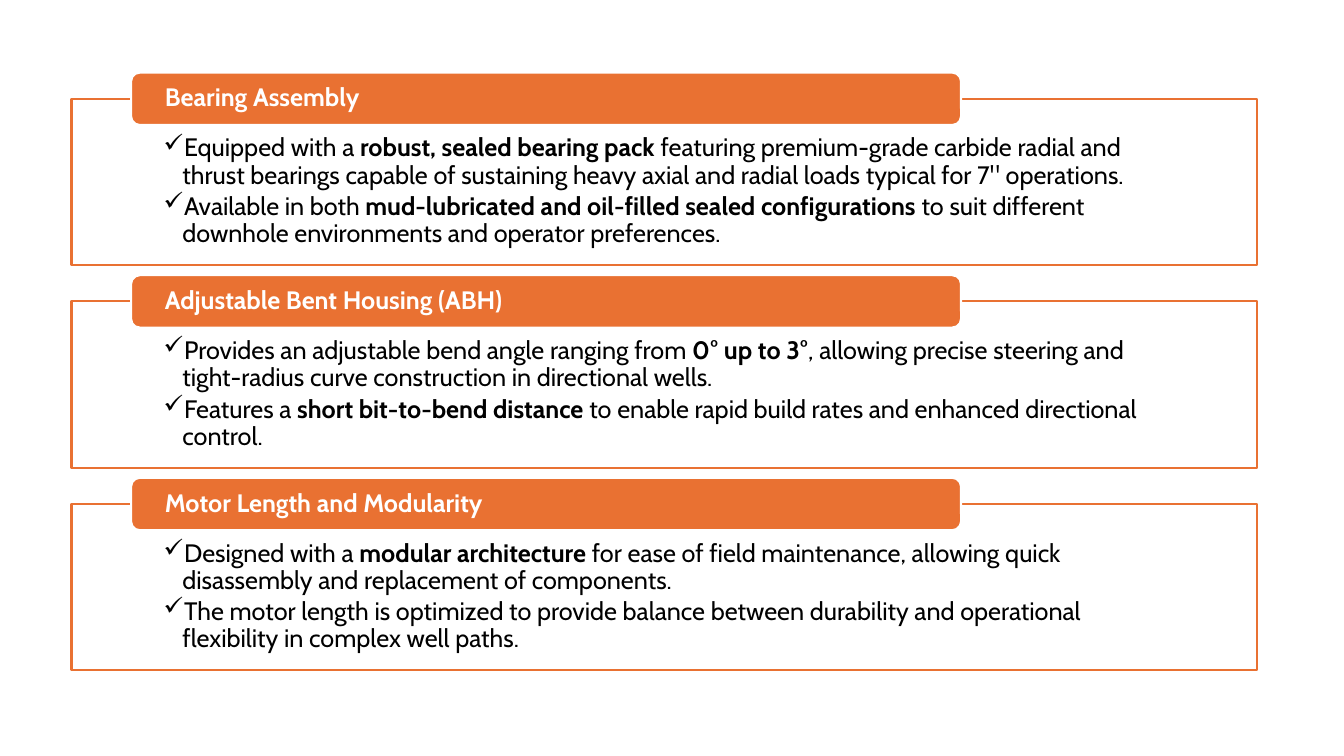
from lxml import etree
from pptx import Presentation
from pptx.dml.color import RGBColor
from pptx.enum.shapes import MSO_SHAPE
from pptx.enum.text import MSO_ANCHOR, PP_ALIGN
from pptx.oxml.ns import qn
from pptx.util import Inches, Pt

RECT, ROUND = MSO_SHAPE.RECTANGLE, MSO_SHAPE.ROUNDED_RECTANGLE
TOP, MIDDLE = MSO_ANCHOR.TOP, MSO_ANCHOR.MIDDLE
LEFT = PP_ALIGN.LEFT
ORANGE, WHITE, BLACK = "E97132", "FFFFFF", "000000"
PITCH = 2.01

CARDS = [
    ("Bearing Assembly", [
        "Equipped with a |robust, sealed bearing pack| featuring premium-grade carbide radial "
        "and thrust bearings capable of sustaining heavy axial and radial loads typical for "
        "7\" operations.",
        "Available in both |mud-lubricated and oil-filled sealed configurations| to suit "
        "different downhole environments and operator preferences.",
    ]),
    ("Adjustable Bent Housing (ABH)", [
        "Provides an adjustable bend angle ranging from |0° up to 3°|, allowing precise "
        "steering and tight-radius curve construction in directional wells.",
        "Features a |short bit-to-bend distance| to enable rapid build rates and enhanced "
        "directional control.",
    ]),
    ("Motor Length and Modularity", [
        "Designed with a |modular architecture| for ease of field maintenance, allowing quick "
        "disassembly and replacement of components.",
        "The motor length is optimized to provide balance between durability and operational "
        "flexibility in complex well paths.",
    ]),
]


def paint(color, value):
    """Set a color format from a hex string."""
    color.rgb = RGBColor.from_string(value)


def put(item, values):
    """Set attributes from a dict of format values."""
    for name, value in values.items():
        setattr(item, name, value)


def panel(slide, kind, box, fill, line, pads, anchor):
    """Add a filled, outlined shape ready for text."""
    shape = slide.shapes.add_shape(kind, *map(Inches, box))
    shape.shadow.inherit = False
    shape.fill.solid()
    paint(shape.fill.fore_color, fill)
    paint(shape.line.color, line)
    shape.line.width = Pt(1.5)
    sides = ("margin_left", "margin_top", "margin_right", "margin_bottom")
    put(shape.text_frame, dict(zip(sides, map(Inches, pads))))
    put(shape.text_frame, {"word_wrap": True, "vertical_anchor": anchor})
    return shape


def write(para, text, color, bold=False):
    """Write a paragraph whose weight flips at each bar."""
    put(para, {"alignment": LEFT, "line_spacing": 0.9, "space_after": Pt(3)})
    for part in text.split("|"):
        run = para.add_run()
        run.text = part
        put(run.font, {"name": "Cabin", "size": Pt(18), "bold": bold})
        paint(run.font.color, color)
        bold = not bold


def tick(para):
    """Give a paragraph a hanging check mark."""
    props = para._p.get_or_add_pPr()
    props.set("marL", str(Inches(0.19)))
    props.set("indent", str(-Inches(0.19)))
    font = etree.SubElement(props, qn("a:buFont"))
    font.set("typeface", "Wingdings")
    font.set("charset", "2")
    etree.SubElement(props, qn("a:buChar")).set("char", "ü")


def card(slide, box, title, points):
    """Draw a framed list with a title tab over its top edge."""
    left, top, width, height = box
    body = panel(slide, RECT, box, WHITE, ORANGE, (0.91, 0.36, 0.91, 0.14), TOP)
    tint = body.fill._xPr.find(qn("a:solidFill"))[0]
    etree.SubElement(tint, qn("a:alpha")).set("val", "90000")
    frame = body.text_frame
    for i, point in enumerate(points):
        para = frame.add_paragraph() if i else frame.paragraphs[0]
        write(para, point, BLACK)
        tick(para)
    spot = (left + 0.59, top - 0.26, width * 0.7, 0.52)
    tab = panel(slide, ROUND, spot, ORANGE, WHITE, (0.31, 0, 0.31, 0), MIDDLE)
    para = tab.text_frame.paragraphs[0]
    write(para, title, WHITE, True)
    para.space_after = Pt(0)


def main():
    """Build and save the slide."""
    deck = Presentation()
    put(deck, {"slide_width": Inches(13.33), "slide_height": Inches(7.5)})
    slide = deck.slides.add_slide(deck.slide_layouts[6])
    for i, (title, points) in enumerate(CARDS):
        card(slide, (0.71, 0.98 + i * PITCH, 11.76, 1.65), title, points)
    deck.save("out.pptx")


if __name__ == "__main__":
    main()
